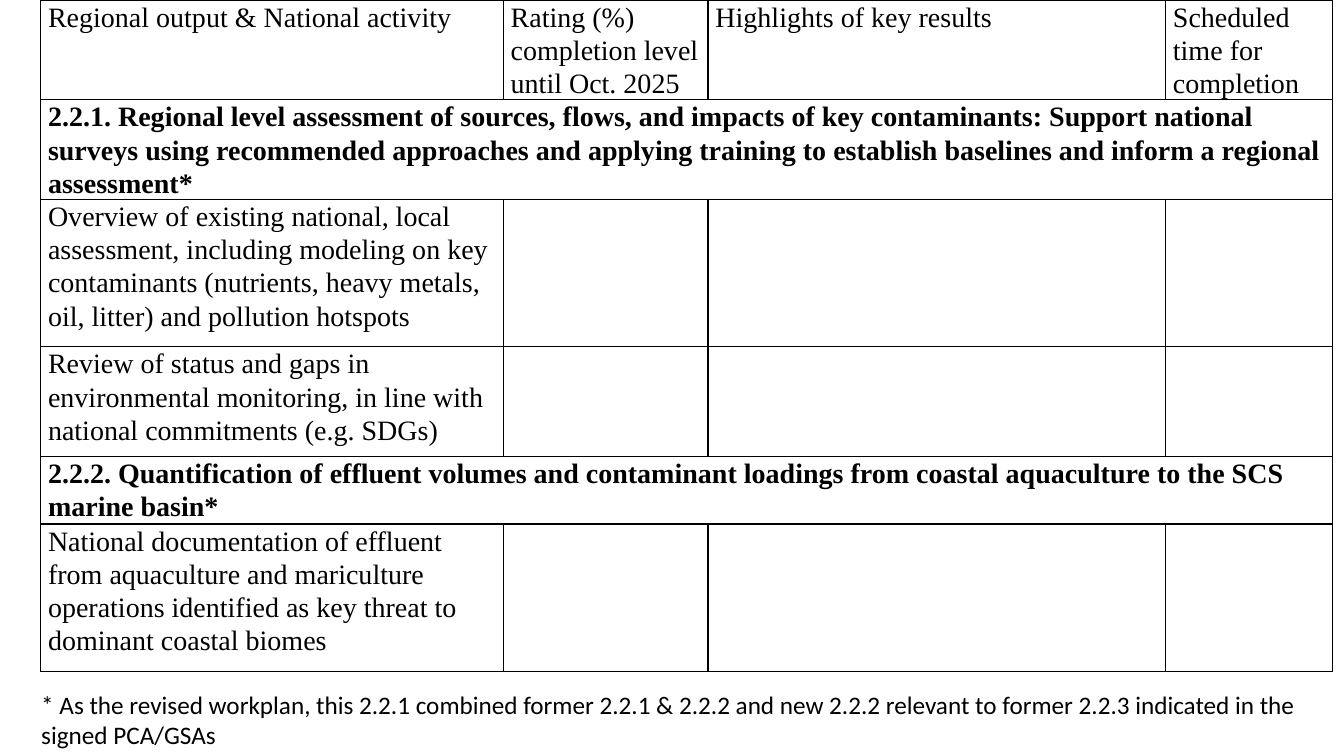
from lxml import etree
from pptx import Presentation
from pptx.dml.color import RGBColor
from pptx.oxml.ns import qn
from pptx.util import Cm, Pt

COLORS = {"ink": "000000"}
CELL_FONT = {"name": "Times New Roman", "size": Pt(20)}
NOTE_FONT = {"name": "Calibri", "size": Pt(18)}
CELL_FORMAT = {"margin_left": Cm(0.19), "margin_right": Cm(0.19),
               "margin_top": 0, "margin_bottom": 0}
PARAGRAPH_FORMAT = {"line_spacing": 1.07, "space_after": Pt(8)}

COLUMN_WIDTHS = [11.66, 5.16, 11.53, 4.22]
HEADINGS = [
    "Regional output & National activity",
    "Rating (%) completion level until Oct. 2025",
    "Highlights of key results",
    "Scheduled time for completion",
]
ROWS = [
    (2.5, HEADINGS),
    (2.5, "2.2.1. Regional level assessment of sources, flows, and impacts of key "
          "contaminants: Support national surveys using recommended approaches and "
          "applying training to establish baselines and inform a regional assessment*"),
    (3.71, ["Overview of existing national, local assessment, including modeling on key "
            "contaminants (nutrients, heavy metals, oil, litter) and pollution hotspots"]),
    (2.77, ["Review of status and gaps in environmental monitoring, in line with "
            "national commitments (e.g. SDGs)"]),
    (1.7, "2.2.2. Quantification of effluent volumes and contaminant loadings from "
          "coastal aquaculture to the SCS marine basin*"),
    (3.71, ["National documentation of effluent from aquaculture and mariculture "
            "operations identified as key threat to dominant coastal biomes"]),
]
NOTE = ("* As the revised workplan, this 2.2.1 combined former 2.2.1 & 2.2.2 and new "
        "2.2.2 relevant to former 2.2.3 indicated in the signed PCA/GSAs")


def apply_format(target, values):
    """Set each named attribute on the target."""
    for name, value in values.items():
        setattr(target, name, value)


def write_text(paragraph, text, font_format, bold=False):
    """Put one formatted run in the paragraph."""
    run = paragraph.add_run()
    run.text = text
    apply_format(run.font, {**font_format, "bold": bold})
    run.font.color.rgb = RGBColor.from_string(COLORS["ink"])


def add_borders(cell):
    """Draw a thin line on all four sides of the cell."""
    properties = cell._tc.get_or_add_tcPr()
    for index, side in enumerate(("lnL", "lnR", "lnT", "lnB")):
        line = etree.Element(qn(f"a:{side}"), w=str(Pt(1)))
        fill = etree.SubElement(line, qn("a:solidFill"))
        etree.SubElement(fill, qn("a:srgbClr"), val=COLORS["ink"])
        properties.insert(index, line)


def add_progress_table(slide, left, top):
    """Place the activity table with its top left corner at the given point."""
    width = sum(COLUMN_WIDTHS)
    height = sum(row_height for row_height, _ in ROWS)
    table = slide.shapes.add_table(len(ROWS), len(COLUMN_WIDTHS), Cm(left), Cm(top),
                                   Cm(width), Cm(height)).table
    apply_format(table, {"first_row": False, "horz_banding": False})
    for column, column_width in zip(table.columns, COLUMN_WIDTHS):
        column.width = Cm(column_width)
    for cell in table.iter_cells():
        apply_format(cell, CELL_FORMAT)
        cell.fill.background()
        add_borders(cell)
    for index, (row_height, content) in enumerate(ROWS):
        row = table.rows[index]
        row.height = Cm(row_height)
        is_section = isinstance(content, str)
        if is_section:
            row.cells[0].merge(row.cells[len(COLUMN_WIDTHS) - 1])
        for cell, text in zip(row.cells, [content] if is_section else content):
            paragraph = cell.text_frame.paragraphs[0]
            apply_format(paragraph, PARAGRAPH_FORMAT)
            write_text(paragraph, text, CELL_FONT, bold=is_section)


def add_footnote(slide, left, top, width, height):
    """Place the workplan note in the given box."""
    text_frame = slide.shapes.add_textbox(Cm(left), Cm(top), Cm(width), Cm(height)).text_frame
    text_frame.word_wrap = True
    write_text(text_frame.paragraphs[0], NOTE, NOTE_FONT)


def main():
    """Build and save the progress slide."""
    presentation = Presentation()
    apply_format(presentation, {"slide_width": Cm(33.87), "slide_height": Cm(19.05)})
    slide = presentation.slides.add_slide(presentation.slide_layouts[6])
    add_progress_table(slide, 1.02, 0)
    add_footnote(slide, 0.79, 17.25, 32.54, 1.8)
    presentation.save("out.pptx")


if __name__ == "__main__":
    main()
